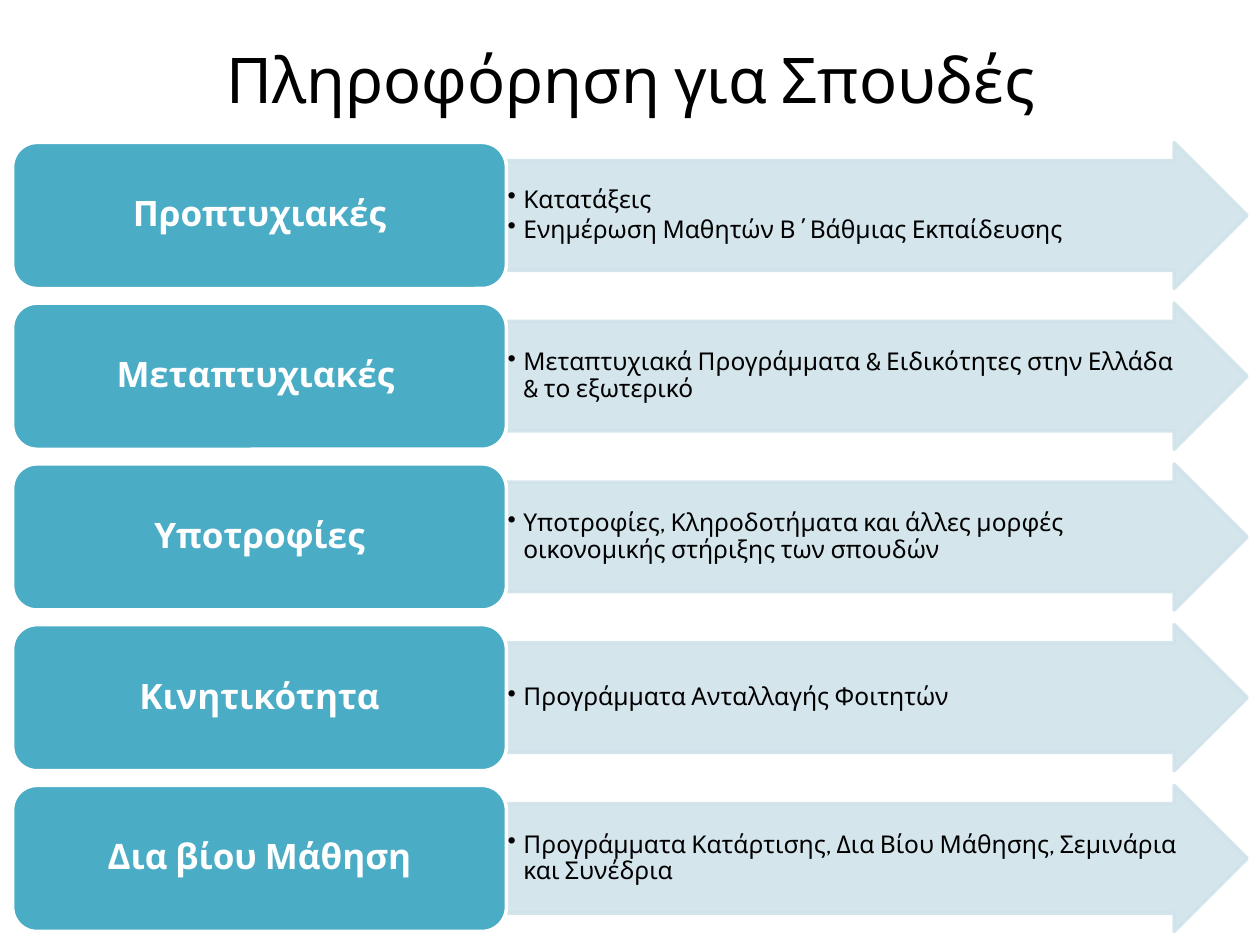
from dataclasses import dataclass

from lxml import etree
from pptx import Presentation
from pptx.dml.color import RGBColor
from pptx.enum.shapes import MSO_SHAPE as Preset
from pptx.enum.text import MSO_ANCHOR as Anchor, PP_ALIGN as Align
from pptx.oxml.ns import qn
from pptx.util import Pt

FONT = "Cabin"
BLACK, WHITE, TEAL, PALE_BLUE = "000000", "FFFFFF", "4BACC6", "D0E3EA"
ROW_TOP, ROW_PITCH, ROW_HEIGHT = 81.4, 91.85, 83.5
LABEL_LEFT, LABEL_WIDTH, LABEL_INSET = 7.2, 282.2, 4.1
ARROW_WIDTH, ARROW_TEXT_WIDTH = 423.3, 392.1
BULLET_INDENT = 9


@dataclass(frozen=True)
class Box:
    left: float
    top: float
    width: float
    height: float

    def inset(self, dx: float, dy: float) -> "Box":
        return Box(self.left + dx, self.top + dy, self.width - 2 * dx, self.height - 2 * dy)

    def lengths(self) -> tuple:
        return Pt(self.left), Pt(self.top), Pt(self.width), Pt(self.height)


@dataclass(frozen=True)
class Style:
    size: float
    color: str
    bold: bool = False
    bulleted: bool = False
    line_spacing: float = 1.0
    space_after: float = 0
    margin_x: float = 7.2
    margin_y: float = 3.6


@dataclass(frozen=True)
class StudyArea:
    label: str
    topics: tuple[str, ...]


TITLE_STYLE = Style(36, BLACK)
LABEL_STYLE = Style(20, WHITE, bold=True, line_spacing=0.9, space_after=7, margin_x=6, margin_y=3)
TOPIC_STYLE = Style(14, BLACK, bulleted=True, line_spacing=0.9, space_after=2.1,
                    margin_x=0.7, margin_y=0.7)

STUDY_AREAS = (
    StudyArea("Προπτυχιακές", ("Κατατάξεις", "Ενημέρωση Μαθητών Β΄Βάθμιας Εκπαίδευσης")),
    StudyArea("Μεταπτυχιακές ",
              ("Μεταπτυχιακά Προγράμματα & Ειδικότητες στην Ελλάδα & το εξωτερικό",)),
    StudyArea("Υποτροφίες",
              ("Υποτροφίες, Κληροδοτήματα και άλλες μορφές οικονομικής στήριξης των σπουδών",)),
    StudyArea("Κινητικότητα", ("Προγράμματα Ανταλλαγής Φοιτητών",)),
    StudyArea("Δια βίου Μάθηση",
              ("Προγράμματα Κατάρτισης, Δια Βίου Μάθησης, Σεμινάρια και Συνέδρια",)),
)


def rgb(color: str) -> RGBColor:
    return RGBColor.from_string(color)


def add_bullet(paragraph) -> None:
    paragraph.level = 1
    properties = paragraph._p.get_or_add_pPr()
    properties.set("marL", str(Pt(BULLET_INDENT)))
    properties.set("indent", str(-Pt(BULLET_INDENT)))
    etree.SubElement(properties, qn("a:buChar"), char="•")


def add_text(slide, box: Box, lines: tuple[str, ...], style: Style) -> None:
    frame = slide.shapes.add_textbox(*box.lengths()).text_frame
    frame.word_wrap = True
    frame.vertical_anchor = Anchor.MIDDLE
    frame.margin_left = frame.margin_right = Pt(style.margin_x)
    frame.margin_top = frame.margin_bottom = Pt(style.margin_y)
    for index, line in enumerate(lines):
        paragraph = frame.add_paragraph() if index else frame.paragraphs[0]
        paragraph.alignment = Align.LEFT if style.bulleted else Align.CENTER
        paragraph.line_spacing = style.line_spacing
        paragraph.space_after = Pt(style.space_after)
        if style.bulleted:
            add_bullet(paragraph)
        run = paragraph.add_run()
        run.text = line
        run.font.name = FONT
        run.font.size = Pt(style.size)
        run.font.bold = style.bold
        run.font.color.rgb = rgb(style.color)


def add_panel(slide, preset: Preset, box: Box, fill: str, line: str, opacity: int = 100):
    panel = slide.shapes.add_shape(preset, *box.lengths())
    panel.shadow.inherit = False
    panel.fill.solid()
    panel.fill.fore_color.rgb = rgb(fill)
    panel.line.color.rgb = rgb(line)
    panel.line.width = Pt(2)
    if opacity < 100:
        for color in panel._element.spPr.iter(qn("a:srgbClr")):
            etree.SubElement(color, qn("a:alpha"), val=str(opacity * 1000))
    return panel


def add_study_area(slide, area: StudyArea, top: float) -> None:
    label_box = Box(LABEL_LEFT, top, LABEL_WIDTH, ROW_HEIGHT)
    arrow_left = LABEL_LEFT + LABEL_WIDTH
    # Arrow with its topics
    arrow = add_panel(slide, Preset.RIGHT_ARROW, Box(arrow_left, top, ARROW_WIDTH, ROW_HEIGHT),
                      PALE_BLUE, PALE_BLUE, opacity=90)
    arrow.adjustments[0] = 0.75
    arrow.adjustments[1] = 0.5
    topics_box = Box(arrow_left, top, ARROW_TEXT_WIDTH, ROW_HEIGHT).inset(0, ROW_HEIGHT / 8)
    add_text(slide, topics_box, area.topics, TOPIC_STYLE)
    # Rounded label
    add_panel(slide, Preset.ROUNDED_RECTANGLE, label_box, TEAL, WHITE)
    add_text(slide, label_box.inset(LABEL_INSET, LABEL_INSET), (area.label,), LABEL_STYLE)


def main() -> None:
    deck = Presentation()
    deck.slide_width, deck.slide_height = Pt(720), Pt(540)
    slide = deck.slides.add_slide(deck.slide_layouts[6])
    # Rows of study areas
    for row, area in enumerate(STUDY_AREAS):
        add_study_area(slide, area, ROW_TOP + row * ROW_PITCH)
    # Title
    add_text(slide, Box(36.5, 0, 648, 90), ("Πληροφόρηση για Σπουδές",), TITLE_STYLE)
    deck.save("out.pptx")


if __name__ == "__main__":
    main()
